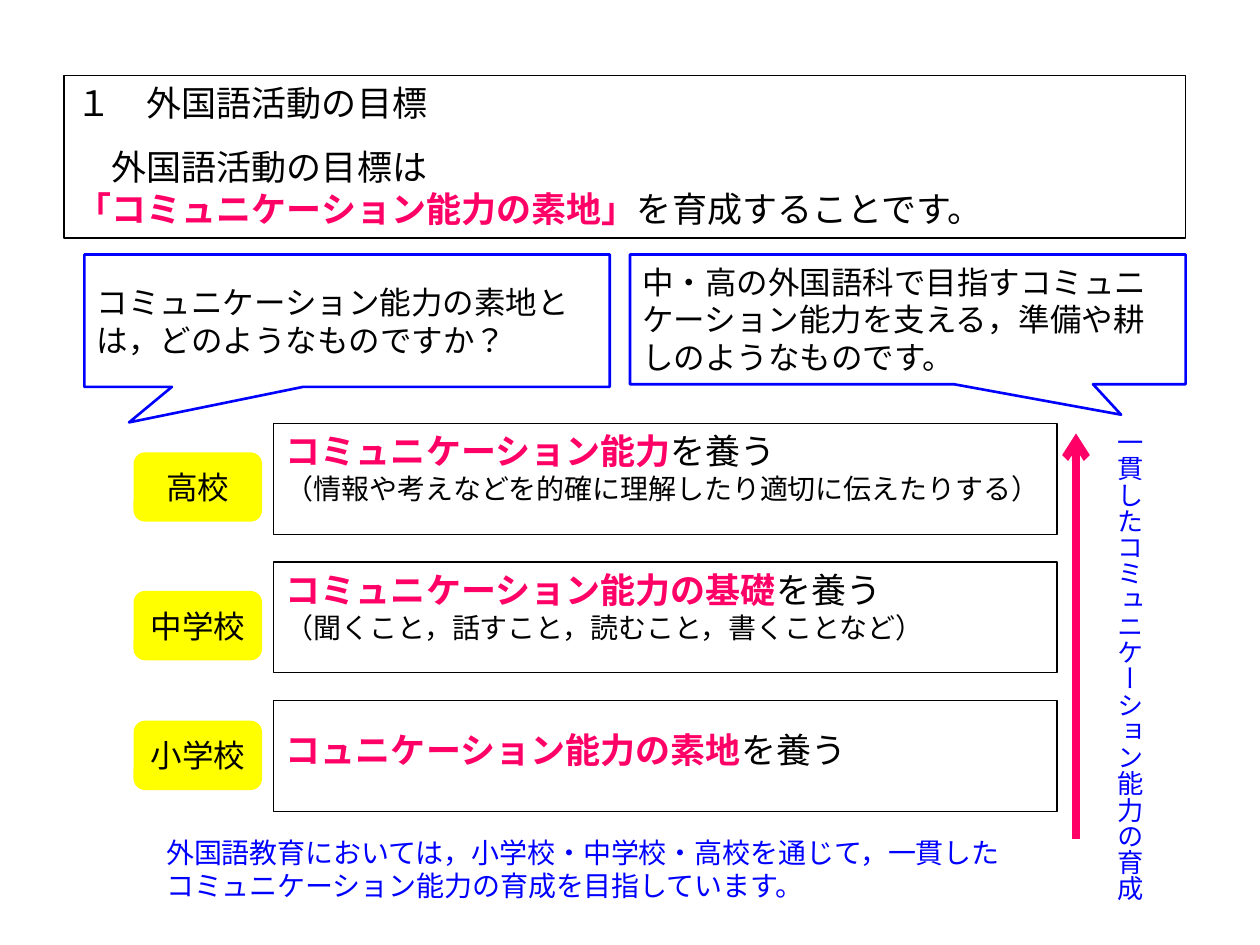
from pptx import Presentation
from pptx.dml.color import RGBColor
from pptx.enum.lang import MSO_LANGUAGE_ID as Language
from pptx.enum.shapes import MSO_CONNECTOR as Connector, MSO_SHAPE as Preset
from pptx.enum.text import MSO_ANCHOR as Anchor, PP_ALIGN as Align
from pptx.oxml.ns import qn
from pptx.util import Inches, Pt
from lxml.etree import SubElement

BLACK = RGBColor(0x00, 0x00, 0x00)
WHITE = RGBColor(0xFF, 0xFF, 0xFF)
BLUE = RGBColor(0x00, 0x00, 0xFF)
PINK = RGBColor(0xFF, 0x00, 0x66)
YELLOW = RGBColor(0xFF, 0xFF, 0x00)
GOTHIC = "Noto Sans CJK JP"


def add_line(box, text, size=20, color=BLACK, font=GOTHIC, strong="", align=Align.LEFT, before=0):
    frame = box.text_frame
    frame.word_wrap = True
    para = frame.paragraphs[0]
    if para.runs:
        para = frame.add_paragraph()
    para.alignment = align
    para.space_before = Pt(before)
    para.line_spacing = Pt(size * 1.2)
    for words, bold in ((strong, True), (text, False)):
        if words:
            span = para.add_run()
            span.text = words
            span.font.size = Pt(size)
            span.font.bold = bold
            span.font.name = font
            span.font.language_id = Language.JAPANESE
            span.font.color.rgb = PINK if bold else color
            SubElement(span.font._element, qn("a:ea"), typeface=GOTHIC)


def add_box(preset, left, top, width, height, fill=None, line=None, weight=0.75, anchor=Anchor.TOP):
    box = page.shapes.add_shape(preset, Inches(left), Inches(top), Inches(width), Inches(height))
    box.shadow.inherit = False
    if fill is None:
        box.fill.background()
    else:
        box.fill.solid()
        box.fill.fore_color.rgb = fill
    if line is None:
        box.line.fill.background()
    else:
        box.line.color.rgb = line
        box.line.width = Pt(weight)
    box.text_frame.vertical_anchor = anchor
    return box


deck = Presentation()
deck.slide_width, deck.slide_height = Inches(10), Inches(7.5)
page = deck.slides.add_slide(deck.slide_layouts[6])

goal = add_box(Preset.RECTANGLE, 0.51, 0.6, 8.9, 1.29, line=BLACK, weight=1)
add_line(goal, "１　外国語活動の目標")
add_line(goal, "　外国語活動の目標は", before=12.6)
add_line(goal, "を育成することです。", strong="「コミュニケーション能力の素地」")

callouts = [
    (0.67, 4.17, 1.05, -0.415, 0.769, "コミュニケーション能力の素地とは，どのようなものですか？"),
    (5, 4.41, 1.03, 0.384, 0.735,
     "中・高の外国語科で目指すコミュニケーション能力を支える，準備や耕しのようなものです。"),
]
for left, width, height, tip_x, tip_y, text in callouts:
    callout = add_box(Preset.RECTANGULAR_CALLOUT, left, 2.02, width, height,
                      fill=WHITE, line=BLUE, weight=1.5, anchor=Anchor.MIDDLE)
    callout.adjustments[0] = tip_x
    callout.adjustments[1] = tip_y
    add_line(callout, text, size=18)

stages = [
    ("高校", 3.59, "コミュニケーション能力", "を養う", "（情報や考えなどを的確に理解したり適切に伝えたりする）"),
    ("中学校", 4.69, "コミュニケーション能力の基礎", "を養う", "（聞くこと，話すこと，読むこと，書くことなど）"),
    ("小学校", 5.72, "コュニケーション能力の素地", "を養う", ""),
]
for index, (school, badge_top, strong, text, detail) in enumerate(stages):
    stage = add_box(Preset.RECTANGLE, 2.17, 3.36 + 1.1 * index, 6.22, 0.88, line=BLACK)
    add_line(stage, text, strong=strong)
    if detail:
        add_line(stage, detail, size=16)
    else:
        stage.text_frame.margin_top = Inches(0.22)
    badge = add_box(Preset.ROUNDED_RECTANGLE, 1.06, badge_top, 1.02, 0.55, fill=YELLOW, anchor=Anchor.MIDDLE)
    add_line(badge, school, size=18, font="Calibri", align=Align.CENTER)

arrow = page.shapes.add_connector(Connector.STRAIGHT, Inches(8.54), Inches(6.66), Inches(8.54), Inches(3.44))
arrow.line.color.rgb = PINK
arrow.line.width = Pt(4.5)
SubElement(arrow.line._get_or_add_ln(), qn("a:tailEnd"), type="arrow")
SubElement(arrow._element.spPr, qn("a:effectLst"))

aim = page.shapes.add_textbox(Inches(8.62), Inches(3.41), Inches(0.47), Inches(3.9))
add_line(aim, "一貫したコミュニケーション能力の育成", size=15, color=BLUE, font="Calibri")
frame = aim.text_frame
frame.margin_left = frame.margin_right = frame.margin_top = frame.margin_bottom = 0
frame._txBody.bodyPr.set("vert", "eaVert")

summary = page.shapes.add_textbox(Inches(1.22), Inches(6.58), Inches(7.09), Inches(0.64))
add_line(summary, "外国語教育においては，小学校・中学校・高校を通じて，一貫した", size=16, color=BLUE)
add_line(summary, "コミュニケーション能力の育成を目指しています。", size=16, color=BLUE)

deck.save("out.pptx")
